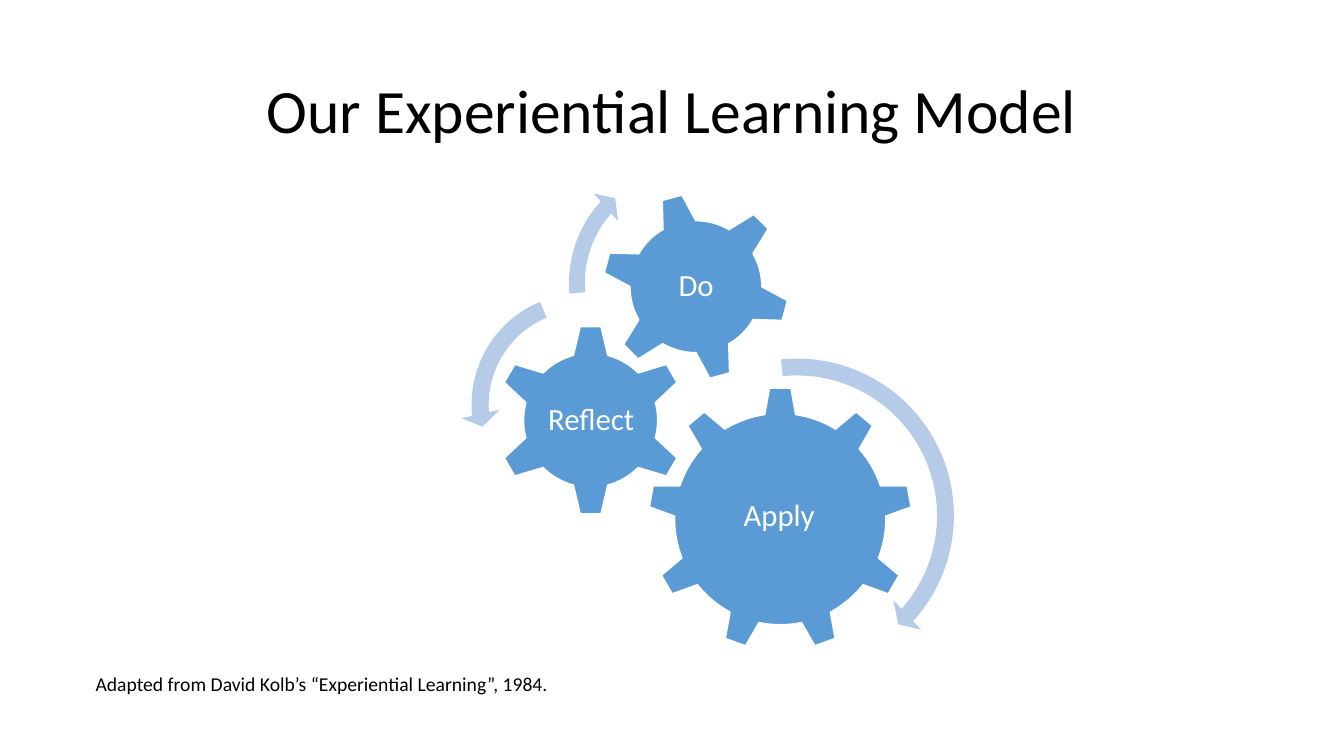
"""Build the slide of the experiential learning model with three gears."""
import pptx
import pptx.dml.color
import pptx.enum.shapes
import pptx.enum.text
import pptx.util

Pt = pptx.util.Pt
SHAPES = pptx.enum.shapes.MSO_SHAPE
ALIGN = pptx.enum.text.PP_ALIGN
ANCHOR = pptx.enum.text.MSO_ANCHOR
BLACK = pptx.dml.color.RGBColor(0x00, 0x00, 0x00)
WHITE = pptx.dml.color.RGBColor(0xFF, 0xFF, 0xFF)
GEAR_BLUE = pptx.dml.color.RGBColor(0x5B, 0x9B, 0xD5)
ARROW_BLUE = pptx.dml.color.RGBColor(0xB5, 0xCB, 0xE7)

CENTRED_FRAME = {"vertical_anchor": ANCHOR.MIDDLE}
CENTRED_LINES = {"alignment": ALIGN.CENTER, "line_spacing": 0.9}
LABEL_FRAME = CENTRED_FRAME | {
    "margin_" + side: Pt(2.2) for side in ("left", "top", "right", "bottom")
}

GEARS = [
    ("Apply", SHAPES.GEAR_9, (463, 276.5), 188.6, 0, (500.4, 320.4, 112.3, 97.2)),
    ("Reflect", SHAPES.GEAR_6, (353.5, 231.8), 136.8, 0, (388.1, 266.4, 68.4, 67.7)),
    ("Do", SHAPES.GEAR_6, (429.8, 137.5), 134.6, 345, (459.4, 167, 75.6, 75.6)),
]
ARROWS = [
    (SHAPES.CIRCULAR_ARROW, (448.6, 247.7), 241.2, (0.05, 2.99, 25.2, 158.53, 0.06)),
    (SHAPES.LEFT_CIRCULAR_ARROW, (329, 201.6), 175, (0.07, 4.3, 104.89, 148.38, 0.08)),
    (SHAPES.CIRCULAR_ARROW, (398.9, 108), 188.6, (0.06, 3.94, 133.14, 105.08, 0.07)),
]


def apply_format(target, values):
    """Set every attribute named in a dict of format values."""
    for name, value in values.items():
        setattr(target, name, value)


def add_text(slide, text, box, size, color, frame_format, paragraph_format):
    """Add a wrapped text box with one paragraph."""
    frame = slide.shapes.add_textbox(*map(Pt, box)).text_frame
    apply_format(frame, {"word_wrap": True} | frame_format)
    paragraph = frame.paragraphs[0]
    apply_format(paragraph, {"text": text} | paragraph_format)
    font = paragraph.runs[0].font
    apply_format(font, {"name": "Calibri", "size": Pt(size)})
    font.color.rgb = color


def add_square_shape(slide, kind, corner, side, color):
    """Add a filled preset shape as wide as it is high."""
    shape = slide.shapes.add_shape(kind, *map(Pt, (*corner, side, side)))
    shape.shadow.inherit = False
    shape.fill.solid()
    shape.fill.fore_color.rgb = color
    return shape


def add_gear(slide, label, kind, corner, side, rotation, label_box):
    """Add a gear with a white edge and an upright label."""
    gear = add_square_shape(slide, kind, corner, side, GEAR_BLUE)
    gear.rotation = rotation
    gear.line.color.rgb = WHITE
    gear.line.width = Pt(1)
    add_text(slide, label, label_box, 22, WHITE, LABEL_FRAME, CENTRED_LINES)


def add_turn_arrow(slide, kind, corner, side, adjustments):
    """Add a curved arrow that shows which way a gear turns."""
    arrow = add_square_shape(slide, kind, corner, side, ARROW_BLUE)
    arrow.line.fill.background()
    for index, value in enumerate(adjustments):
        arrow.adjustments[index] = value


def main():
    """Build and save the presentation."""
    presentation = pptx.Presentation()
    apply_format(presentation, {"slide_width": Pt(960), "slide_height": Pt(540)})
    slide = presentation.slides.add_slide(presentation.slide_layouts[6])
    add_text(slide, "Our Experiential Learning Model", (66, 28.8, 828, 104.4),
             44, BLACK, CENTRED_FRAME, CENTRED_LINES)
    for gear in GEARS:
        add_gear(slide, *gear)
    for arrow in ARROWS:
        add_turn_arrow(slide, *arrow)
    add_text(slide, "Adapted from David Kolb’s “Experiential Learning”, 1984.",
             (61.2, 476.6, 833, 24.5), 14, BLACK, {}, {})
    presentation.save("out.pptx")


if __name__ == "__main__":
    main()
